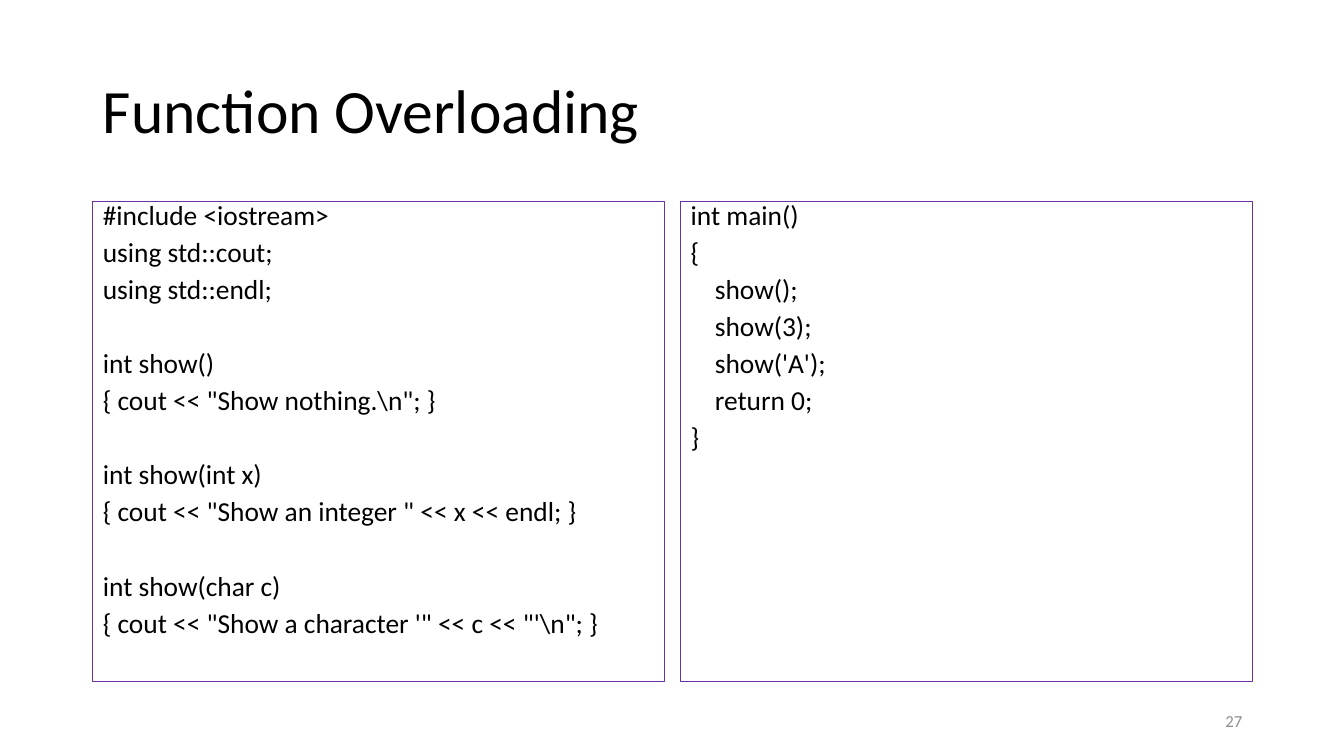
"""Build the Function Overloading slide with two panels of code."""
from dataclasses import dataclass

from lxml.etree import SubElement as Sub
from pptx import Presentation
from pptx.dml.color import RGBColor
from pptx.enum.text import MSO_ANCHOR as Anchor, MSO_AUTO_SIZE as Fit, PP_ALIGN as Align
from pptx.oxml.ns import qn
from pptx.shapes.base import BaseShape as Shape
from pptx.text.text import TextFrame as Frame
from pptx.util import Inches, Pt

GAP = 10
LINE = 16.7
STEP = 0.24
CODE = {"line_spacing": 0.7, "space_after": Pt(0), "alignment": Align.LEFT}


@dataclass
class Panel:
    slot: int
    left: float
    blocks: list[str]


PANELS = [
    Panel(1, 0.92, [
        "#include <iostream>\nusing std::cout;\nusing std::endl;",
        'int show()\n{ cout << "Show nothing.\\n"; }',
        'int show(int x)\n{ cout << "Show an integer " << x << endl; }',
        "int show(char c)\n{ cout << \"Show a character '\" << c << \"'\\n\"; }",
    ]),
    Panel(2, 6.75, ["int main()\n{\n\tshow();\n\tshow(3);\n\tshow('A');\n\treturn 0;\n}"]),
]


def shade(code: str) -> RGBColor:
    """Turn a hex string into a colour."""
    return RGBColor.from_string(code)


def style(item: object, form: dict) -> None:
    """Set each format value on the item."""
    for key, val in form.items():
        setattr(item, key, val)


def place(shape: Shape, left: float, top: float, wide: float, high: float) -> None:
    """Move and size a shape in inches."""
    spots = dict(left=left, top=top, width=wide, height=high)
    style(shape, {key: Inches(val) for key, val in spots.items()})


def write(frame: Frame, text: str, size: float, form: dict, ink: str = "000000",
          anchor: Anchor = Anchor.MIDDLE) -> None:
    """Write one paragraph per line of text in a frame."""
    style(frame, {"word_wrap": True, "auto_size": Fit.NONE, "vertical_anchor": anchor})
    frame.text = text
    for para in frame.paragraphs:
        style(para, form)
        for run in para.runs:
            style(run.font, {"name": "Calibri", "size": Pt(size)})
            run.font.color.rgb = shade(ink)


def fill(shape: Shape, panel: Panel) -> None:
    """Fill a bordered panel with blocks of code."""
    place(shape, panel.left, 2, 5.67, 4.76)
    shape.line.color.rgb = shade("7030A0")
    shape.line.width = Pt(0.75)
    rows = [(row, num > 0 and pos == 0)
            for num, block in enumerate(panel.blocks)
            for pos, row in enumerate(block.split("\n"))]
    text = "\n".join(row.lstrip("\t") for row, _ in rows)
    write(shape.text_frame, text, 19.6, CODE, anchor=Anchor.TOP)
    for para, (row, starts) in zip(shape.text_frame.paragraphs, rows):
        para.space_before = Pt(GAP + (GAP + LINE if starts else 0))
        props = para._p.get_or_add_pPr()
        props.set("marL", str(Inches(STEP * row.count("\t"))))
        props.set("indent", "0")
        Sub(props, qn("a:buNone"))


def main() -> None:
    """Build and save the slide."""
    deck = Presentation()
    style(deck, {"slide_width": Inches(13.33), "slide_height": Inches(7.5)})
    slide = deck.slides.add_slide(deck.slide_layouts[3])
    title = slide.shapes.title
    place(title, 0.92, 0.4, 11.5, 1.45)
    write(title.text_frame, "Function Overloading", 44,
          {"line_spacing": 0.9, "alignment": Align.LEFT})
    for panel in PANELS:
        fill(slide.placeholders[panel.slot], panel)
    page = slide.shapes.add_textbox(0, 0, 0, 0)
    place(page, 9.42, 6.95, 3, 0.4)
    write(page.text_frame, "27", 12, {"alignment": Align.RIGHT}, "8C8C8C")
    deck.save("out.pptx")


if __name__ == "__main__":
    main()
